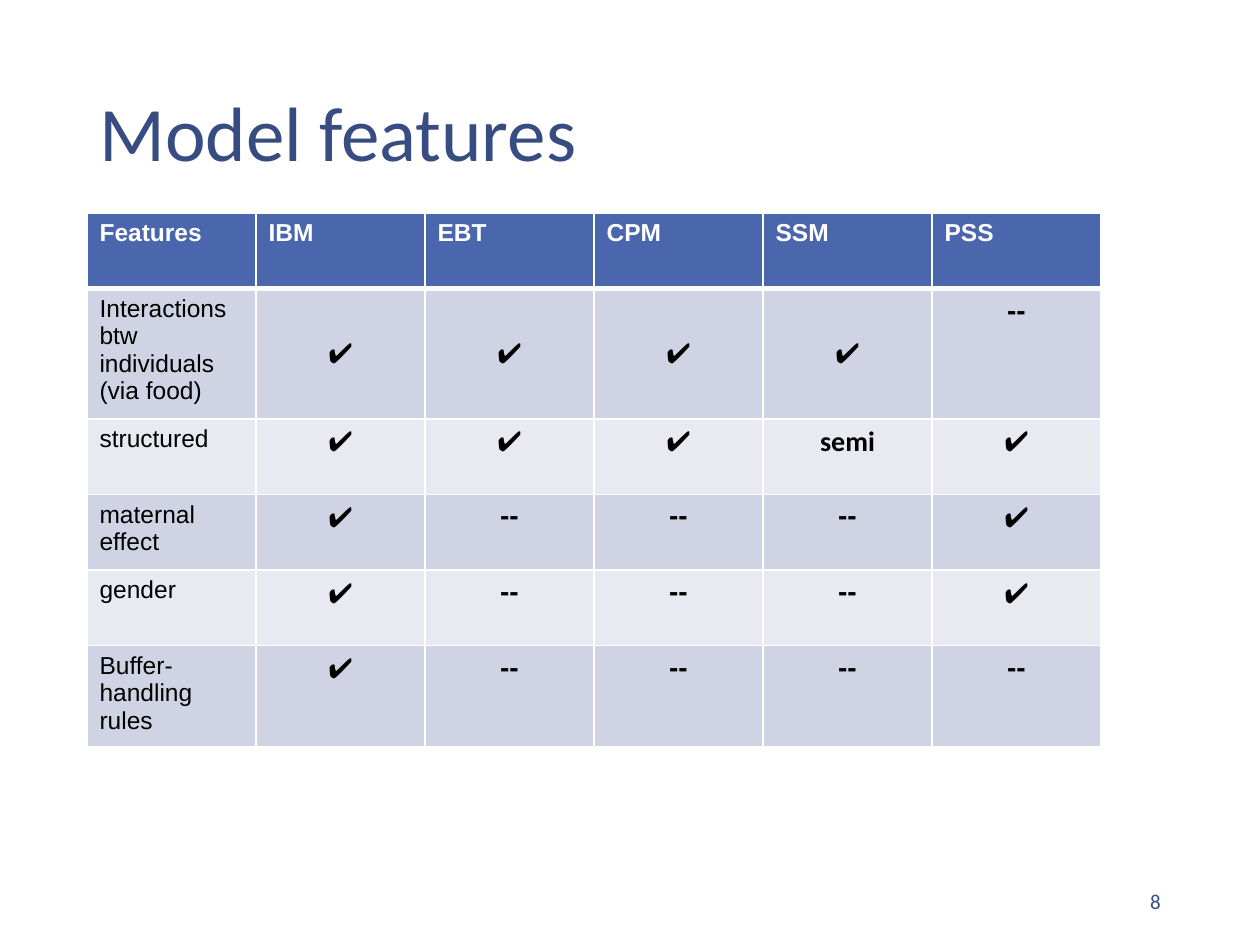
from dataclasses import dataclass

from lxml.etree import SubElement
from pptx import Presentation
from pptx.dml.color import RGBColor
from pptx.enum.text import MSO_ANCHOR, PP_ALIGN
from pptx.oxml.ns import qn
from pptx.util import Inches, Pt

NAVY, BLUE, WHITE, BLACK = "374C81", "4A66AC", "FFFFFF", "000000"
BANDS = ("D0D3E3", "E9EAF1")
YES, NO = "✔️", "--"
HEADS = ("Features", "IBM", "EBT", "CPM", "SSM", "PSS")


@dataclass
class Feature:
    name: str
    marks: tuple
    anchor: MSO_ANCHOR = MSO_ANCHOR.TOP


FEATURES = (
    Feature("Interactions btw individuals (via food)",
            (YES, YES, YES, YES, NO), MSO_ANCHOR.MIDDLE),
    Feature("structured", (YES, YES, YES, "semi", YES)),
    Feature("maternal effect", (YES, NO, NO, NO, YES)),
    Feature("gender", (YES, NO, NO, NO, YES)),
    Feature("Buffer- handling rules", (YES, NO, NO, NO, NO)),
)


def color(code: str) -> RGBColor:
    return RGBColor.from_string(code)


def write(frame, text: str, size: float, face: str, code: str,
          bold: bool = False, align=PP_ALIGN.LEFT) -> None:
    para = frame.paragraphs[0]
    para.alignment = align
    run = para.add_run()
    run.text = text
    font = run.font
    font.size, font.name, font.bold = Pt(size), face, bold
    font.color.rgb = color(code)


def place(shape, left: float, top: float, width: float, height: float) -> None:
    shape.left, shape.top = Inches(left), Inches(top)
    shape.width, shape.height = Inches(width), Inches(height)


def border(cell, top: float, bottom: float) -> None:
    """Draw white cell edges; they must precede the fill in the XML."""
    props = cell._tc.get_or_add_tcPr()
    for side, width in (("L", 1), ("R", 1), ("T", top), ("B", bottom)):
        line = SubElement(props, qn(f"a:ln{side}"), w=str(Pt(width)))
        fill = SubElement(line, qn("a:solidFill"))
        SubElement(fill, qn("a:srgbClr"), val=WHITE)


def paint(cell, code: str, top: float = 1, bottom: float = 1) -> None:
    border(cell, top, bottom)
    cell.fill.solid()
    cell.fill.fore_color.rgb = color(code)


def fill_row(table, row: int, item: Feature) -> None:
    band = BANDS[(row - 1) % 2]
    edge = 3 if row == 1 else 1
    label = table.cell(row, 0)
    paint(label, band, top=edge)
    write(label.text_frame, item.name, 14, "Arial", BLACK)
    for col, mark in enumerate(item.marks, 1):
        cell = table.cell(row, col)
        paint(cell, band, top=edge)
        face = "Arial" if mark == NO else "Calibri"
        cell.vertical_anchor = MSO_ANCHOR.TOP if mark == NO else item.anchor
        write(cell.text_frame, mark, 16, face, BLACK, True, PP_ALIGN.CENTER)


def add_grid(slide) -> None:
    frame = slide.shapes.add_table(
        len(FEATURES) + 1, len(HEADS),
        Inches(0.69), Inches(1.69), Inches(8.05), Inches(4.3))
    table = frame.table
    for row in table.rows:
        row.height = Inches(0.6)
    frame.height = Inches(4.3)
    for col, head in enumerate(HEADS):
        cell = table.cell(0, col)
        paint(cell, BLUE, bottom=3)
        write(cell.text_frame, head, 14, "Arial", WHITE, True)
    for row, item in enumerate(FEATURES, 1):
        fill_row(table, row, item)


def main() -> None:
    deck = Presentation()
    deck.slide_width, deck.slide_height = Inches(10), Inches(7.5)
    slide = deck.slides.add_slide(deck.slide_layouts[5])

    title = slide.shapes.title
    place(title, 0.69, 0.36, 8.62, 1.45)
    title.text_frame.vertical_anchor = MSO_ANCHOR.MIDDLE
    write(title.text_frame, "Model features", 44, "Calibri", NAVY)
    title.text_frame.paragraphs[0].line_spacing = 0.9

    number = slide.shapes.add_textbox(0, 0, 0, 0)
    place(number, 7.06, 6.95, 2.25, 0.4)
    number.text_frame.word_wrap = True
    number.text_frame.vertical_anchor = MSO_ANCHOR.MIDDLE
    write(number.text_frame, "8", 12, "Calibri", NAVY, align=PP_ALIGN.RIGHT)

    add_grid(slide)
    deck.save("out.pptx")


if __name__ == "__main__":
    main()
